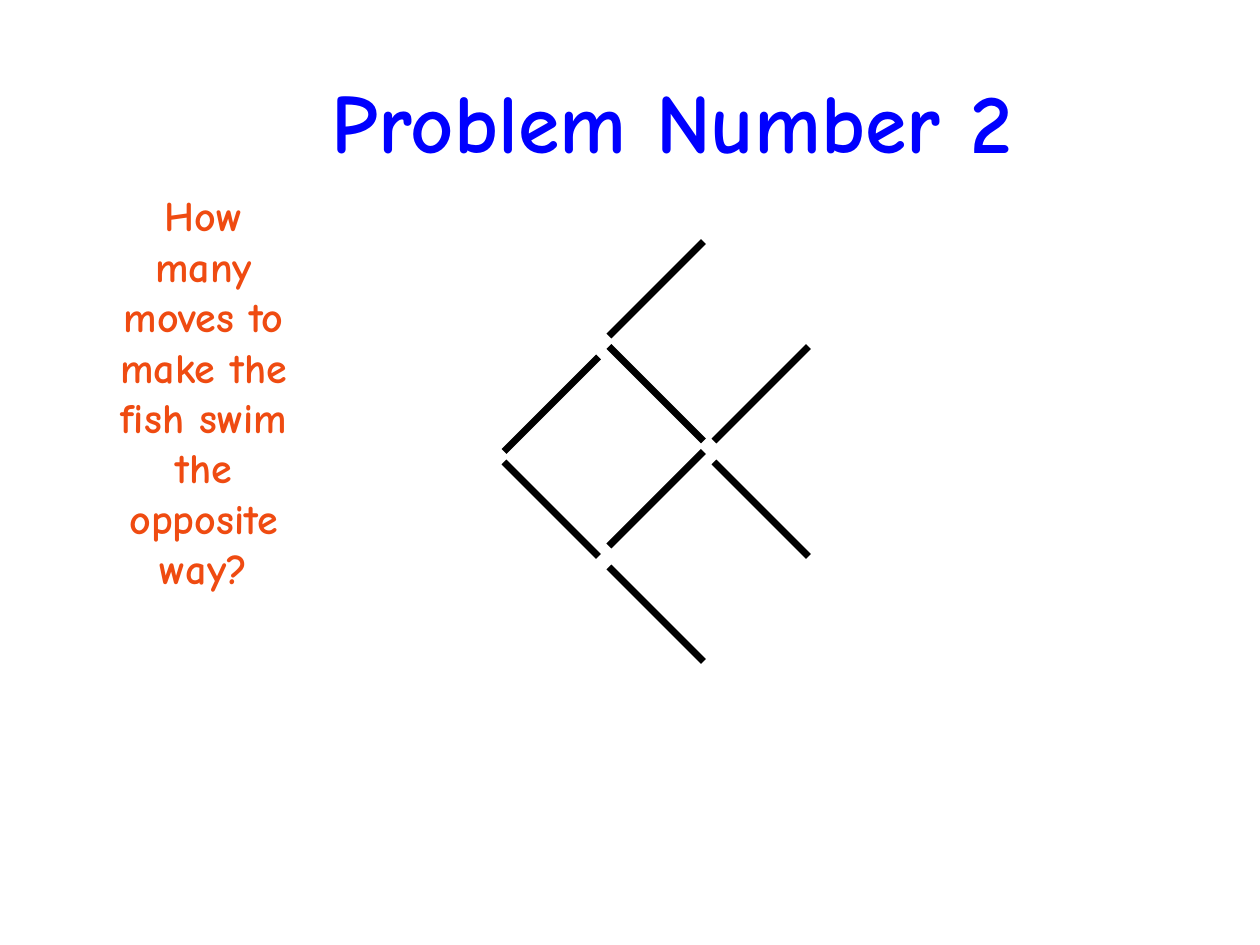
from pptx import Presentation
from pptx import util as u
from pptx.dml.color import RGBColor
from pptx.enum import shapes, text
from pptx.oxml.ns import qn
from lxml import etree

PX = 7620  # EMU per px, 120 px to the inch
FONT = "Comic Neue"
COLORS = {"title": "0000FF", "ask": "EF4B11", "stick": "000000"}
SIDE = 90  # each stick spans this far across and down


class Board:
    def __init__(self, slide):
        self.slide = slide

    def fill(self, box, area, words, size, color):
        box.left, box.top, box.width, box.height = (n * PX for n in area)
        frame = box.text_frame
        frame.word_wrap = True
        frame.auto_size = text.MSO_AUTO_SIZE.NONE
        frame.vertical_anchor = text.MSO_ANCHOR.TOP
        par = frame.paragraphs[0]
        par.alignment = text.PP_ALIGN.CENTER
        run = par.add_run()
        run.text = words
        run.font.name = FONT
        run.font.size = u.Pt(size)
        run.font.bold = True
        run.font.color.rgb = RGBColor.from_string(COLORS[color])

    def title(self, area, words, size, color):
        self.fill(self.slide.shapes.title, area, words, size, color)

    def label(self, area, words, size, color):
        box = self.slide.shapes.add_textbox(0, 0, PX, PX)
        self.fill(box, area, words, size, color)

    def stick(self, x, y, way):
        ends = (x, y, x + SIDE, y + way * SIDE)
        line = self.slide.shapes.add_connector(
            shapes.MSO_CONNECTOR.STRAIGHT, *(n * PX for n in ends))
        line.line.width = u.Pt(4)
        line.line.color.rgb = RGBColor.from_string(COLORS["stick"])
        etree.SubElement(line._element.spPr, qn("a:effectLst"))


def main():
    deck = Presentation()
    deck.slide_width, deck.slide_height = 1200 * PX, 900 * PX
    board = Board(deck.slides.add_slide(deck.slide_layouts[5]))

    # Heading and question
    board.title((220, 60, 840, 108), "Problem Number 2", 48, "title")
    board.label((98, 175, 192, 491),
                "How many moves to make the fish swim the opposite way?",
                24, "ask")

    # Fish of eight sticks: left end and direction (1 down, -1 up)
    fish = [
        (480, 440, 1), (480, 430, -1),   # head
        (580, 520, -1), (580, 330, 1),   # body
        (580, 320, -1), (580, 540, 1),   # fins
        (680, 440, 1), (680, 420, -1),   # tail
    ]
    for x, y, way in fish:
        board.stick(x, y, way)

    deck.save("out.pptx")


if __name__ == "__main__":
    main()
